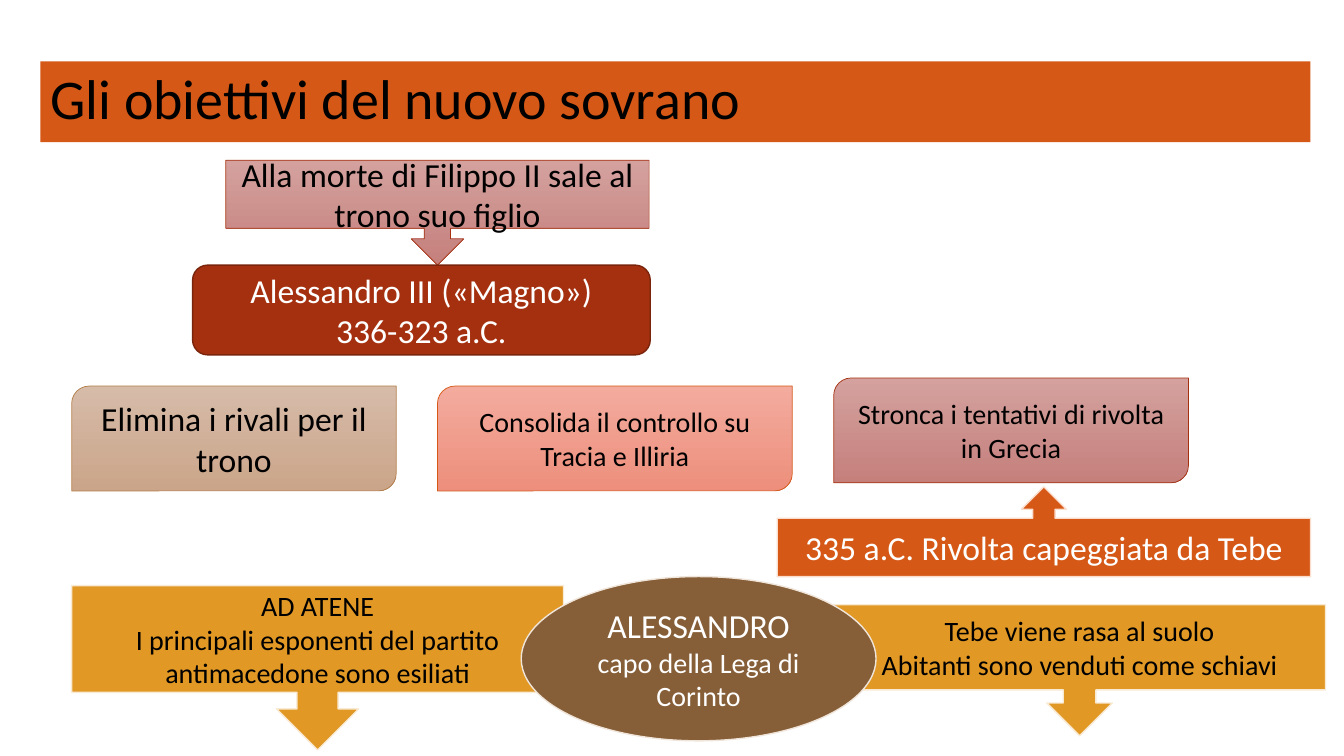
"""Build a slide on the aims of Alexander, the new sovereign of Macedon."""
from dataclasses import dataclass

from pptx import Presentation
from pptx.dml.color import RGBColor
from pptx.enum.shapes import MSO_SHAPE
from pptx.enum.text import MSO_ANCHOR, MSO_AUTO_SIZE, PP_ALIGN
from pptx.util import Inches, Pt


@dataclass(frozen=True)
class Theme:
    font: str = "Calibri"
    title: int = 40
    large: int = 24
    small: int = 20
    black: str = "000000"
    white: str = "FFFFFF"
    orange: tuple = ("D55816",)
    red: tuple = ("A5300F",)
    gold: tuple = ("E19825",)
    brown: tuple = ("865E37",)
    rose: tuple = ("D4A19E", "C5807C")
    sand: tuple = ("D6BBA9", "CBA589")
    coral: tuple = ("F3AB9E", "ED8F7C")
    red_edge: str = "7A240B"
    sand_edge: str = "B27D49"
    orange_edge: str = "FADDCD"
    gold_edge: str = "F9EAD3"
    brown_edge: str = "F0E5DA"


def write(frame, text, sizes, color, align=PP_ALIGN.CENTER, spacing=None):
    frame.word_wrap = True
    frame.auto_size = MSO_AUTO_SIZE.NONE
    frame.vertical_anchor = MSO_ANCHOR.MIDDLE
    for index, (line, size) in enumerate(zip(text.split("\n"), sizes)):
        para = frame.add_paragraph() if index else frame.paragraphs[0]
        para.alignment = align
        para.line_spacing = spacing
        span = para.add_run()
        span.text = line
        span.font.name = theme.font
        span.font.size = Pt(size)
        span.font.color.rgb = RGBColor.from_string(color)


def place(box, left, top, width, height):
    box.left, box.width = int(left * column), int(width * column)
    box.top, box.height = int(top * row), int(height * row)


theme = Theme()
deck = Presentation()
deck.slide_width, deck.slide_height = Inches(13.33), Inches(7.5)
column, row = deck.slide_width / 100, deck.slide_height / 100
page = deck.slides.add_slide(deck.slide_layouts[5])

title = page.shapes.title
place(title, 3, 8.13, 94.5, 10.67)
title.fill.solid()
title.fill.fore_color.rgb = RGBColor.from_string(theme.orange[0])
write(title.text_frame, "Gli obiettivi del nuovo sovrano", [theme.title],
      theme.black, align=PP_ALIGN.LEFT, spacing=0.9)

down, up = MSO_SHAPE.DOWN_ARROW_CALLOUT, MSO_SHAPE.UP_ARROW_CALLOUT
leaf = MSO_SHAPE.ROUND_2_DIAG_RECTANGLE
large, small = theme.large, theme.small
boxes = [
    (down, (16.8, 21.2, 31.5, 13.87), theme.rose, theme.red[0], theme.black,
     "Alla morte di Filippo II sale al trono suo figlio", [large]),
    (MSO_SHAPE.ROUNDED_RECTANGLE, (14.33, 35.07, 34.05, 11.87), theme.red,
     theme.red_edge, theme.white,
     "Alessandro III («Magno»)\n336-323 a.C.", [large, large]),
    (leaf, (5.33, 51.07, 24.15, 13.87), theme.sand, theme.sand_edge,
     theme.black, "Elimina i rivali per il trono", [large]),
    (leaf, (32.55, 51.07, 26.4, 13.87), theme.coral, theme.orange[0],
     theme.black, "Consolida il controllo su Tracia e Illiria", [small]),
    (up, (57.83, 64.4, 39.68, 11.87), theme.orange, theme.orange_edge,
     theme.white, "335 a.C. Rivolta capeggiata da Tebe", [large]),
    (down, (62.03, 80, 36.6, 17.33), theme.gold, theme.gold_edge, theme.black,
     "Tebe viene rasa al suolo\nAbitanti sono venduti come schiavi",
     [small, small]),
    (leaf, (62.03, 50, 26.4, 13.87), theme.rose, theme.red[0], theme.black,
     "Stronca i tentativi di rivolta in Grecia", [small]),
    (down, (5.33, 77.47, 36.6, 21.73), theme.gold, theme.gold_edge,
     theme.black, "AD ATENE\nI principali esponenti del partito "
     "antimacedone sono esiliati", [small, small]),
    (MSO_SHAPE.OVAL, (38.78, 76.27, 26.4, 21.73), theme.brown,
     theme.brown_edge, theme.white,
     "ALESSANDRO\ncapo della Lega di Corinto", [large, small]),
]
for kind, area, fills, edge, ink, text, sizes in boxes:
    box = page.shapes.add_shape(kind, 0, 0, 0, 0)
    place(box, *area)
    box.shadow.inherit = False
    if len(fills) == 1:
        box.fill.solid()
        box.fill.fore_color.rgb = RGBColor.from_string(fills[0])
    else:
        box.fill.gradient()
        box.fill.gradient_angle = 270
        for stop, shade in zip(box.fill.gradient_stops, fills):
            stop.color.rgb = RGBColor.from_string(shade)
    box.line.color.rgb = RGBColor.from_string(edge)
    box.line.width = Pt(1 if len(fills) == 1 else 0.5)
    write(box.text_frame, text, sizes, ink)

deck.save("out.pptx")
